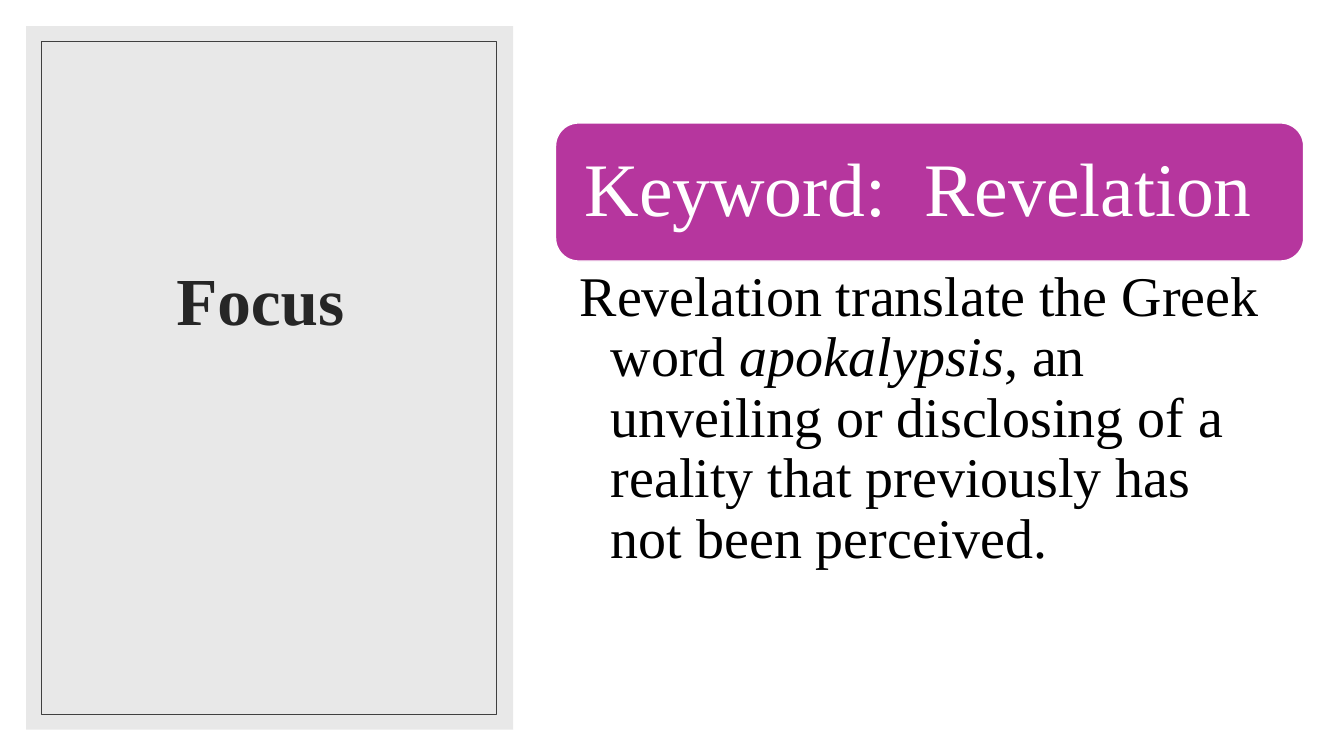
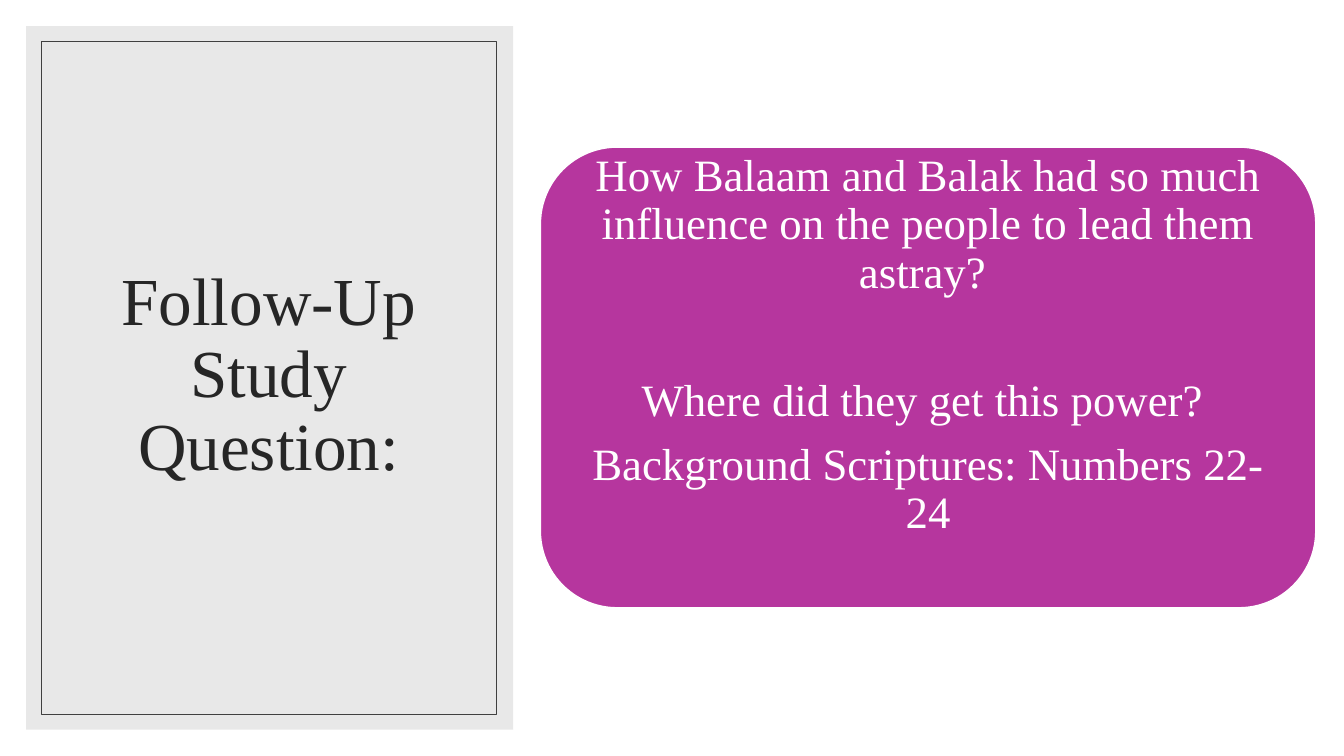
import pptx
import pptx.dml.color
import pptx.enum.shapes
import pptx.enum.text
import pptx.oxml
import pptx.oxml.ns
import pptx.util
from dataclasses import dataclass

Inches = pptx.util.Inches
Pt = pptx.util.Pt
SHAPE = pptx.enum.shapes.MSO_SHAPE
ALIGN = pptx.enum.text.PP_ALIGN
ANCHOR = pptx.enum.text.MSO_ANCHOR


@dataclass(frozen=True)
class Theme:
    font: str = "Times New Roman"
    panel: str = "D9D9D9"
    frame: str = "404040"
    title: str = "262626"
    accent: str = "B6369E"
    white: str = "FFFFFF"
    black: str = "000000"
    title_size: int = 48
    key_size: int = 54
    body_size: int = 40
    ask_size: int = 32
    spacing: float = 0.9


THEME = Theme()


def color(code):
    return pptx.dml.color.RGBColor.from_string(code)


# Shapes and text
def add_box(slide, kind, area, fill=None, line=None, width=1, alpha=None):
    shape = slide.shapes.add_shape(kind, *map(Inches, area))
    shape.shadow.inherit = False
    if fill:
        shape.fill.solid()
        shape.fill.fore_color.rgb = color(fill)
    else:
        shape.fill.background()
    if alpha:
        tint = shape.fill._xPr.find(".//" + pptx.oxml.ns.qn("a:srgbClr"))
        tint.append(pptx.oxml.parse_xml(
            f'<a:alpha {pptx.oxml.ns.nsdecls("a")} val="{alpha * 1000}"/>'))
    if line:
        shape.line.color.rgb = color(line)
        shape.line.width = Pt(width)
    else:
        shape.line.fill.background()
    return shape


def set_frame(shape, inset, anchor=ANCHOR.MIDDLE):
    frame = shape.text_frame
    frame.word_wrap = True
    frame.vertical_anchor = anchor
    (frame.margin_left, frame.margin_top,
     frame.margin_right, frame.margin_bottom) = map(Inches, inset)
    return frame


def add_para(frame, runs, size, tone, align=ALIGN.LEFT, after=0, hang=0):
    """Fill the next paragraph from (text, bold, italic) runs."""
    para = frame.paragraphs[0]
    if para.runs:
        para = frame.add_paragraph()
    para.alignment = align
    para.line_spacing = THEME.spacing
    para.space_after = Pt(after)
    if hang:
        props = para._p.get_or_add_pPr()
        props.set("marL", str(Inches(hang)))
        props.set("indent", str(-Inches(hang)))
    for text, bold, italic in runs:
        run = para.add_run()
        run.text = text
        font = run.font
        font.name, font.size = THEME.font, Pt(size)
        font.bold, font.italic = bold, italic
        font.color.rgb = color(tone)


# Shared side panel with its title
def add_side(deck, title, bold=False, lift=0):
    slide = deck.slides.add_slide(deck.slide_layouts[6])
    add_box(slide, SHAPE.RECTANGLE, (0.26, 0.26, 4.83, 6.98),
            THEME.panel, alpha=60)
    add_box(slide, SHAPE.RECTANGLE, (0.41, 0.41, 4.51, 6.68),
            line=THEME.frame, width=0.5)
    box = slide.shapes.add_textbox(*map(Inches, (0.52, 0.61, 4.29, 6.24)))
    frame = set_frame(box, (0.1, 0.05, 0.1, 0.05 + 2 * lift))
    add_para(frame, [(title, bold, False)], THEME.title_size, THEME.title,
             ALIGN.CENTER)
    return slide


def add_card(slide, area, inset):
    card = add_box(slide, SHAPE.ROUNDED_RECTANGLE, area,
                   THEME.accent, THEME.white)
    return set_frame(card, inset)


# Slides
def add_focus(deck):
    slide = add_side(deck, "Focus ", bold=True, lift=0.72)
    frame = add_card(slide, (5.51, 1.22, 7.42, 1.37), (0.22, 0.1, 0.22, 0.1))
    add_para(frame, [("Keyword:  Revelation", False, False)],
             THEME.key_size, THEME.white)

    body = slide.shapes.add_textbox(*map(Inches, (5.51, 2.6, 7.42, 3.83)))
    frame = set_frame(body, (0.24, 0.06, 0.31, 0.06), ANCHOR.TOP)
    add_para(frame, [
        ("Revelation translate the Greek word ", False, False),
        ("apokalypsis", False, True),
        (", an unveiling or disclosing of a reality that previously has "
         "not been perceived.", False, False),
    ], THEME.body_size, THEME.black, hang=0.31)


def add_study(deck):
    slide = add_side(deck, "Follow-Up Study Question:")
    frame = add_card(slide, (5.36, 1.46, 7.69, 4.57), (0.14, 0, 0.14, 0.63))
    asks = [
        ("How Balaam and Balak had so much influence on the people "
         "to lead them astray? ", 57),
        ("Where did they get this power? ", 11),
        ("Background Scriptures: Numbers 22-24", 0),
    ]
    for text, after in asks:
        add_para(frame, [(text, False, False)], THEME.ask_size, THEME.white,
                 ALIGN.CENTER, after)


def main():
    deck = pptx.Presentation()
    deck.slide_width, deck.slide_height = Inches(13.33), Inches(7.5)
    add_focus(deck)
    add_study(deck)
    deck.save("out.pptx")


if __name__ == "__main__":
    main()
